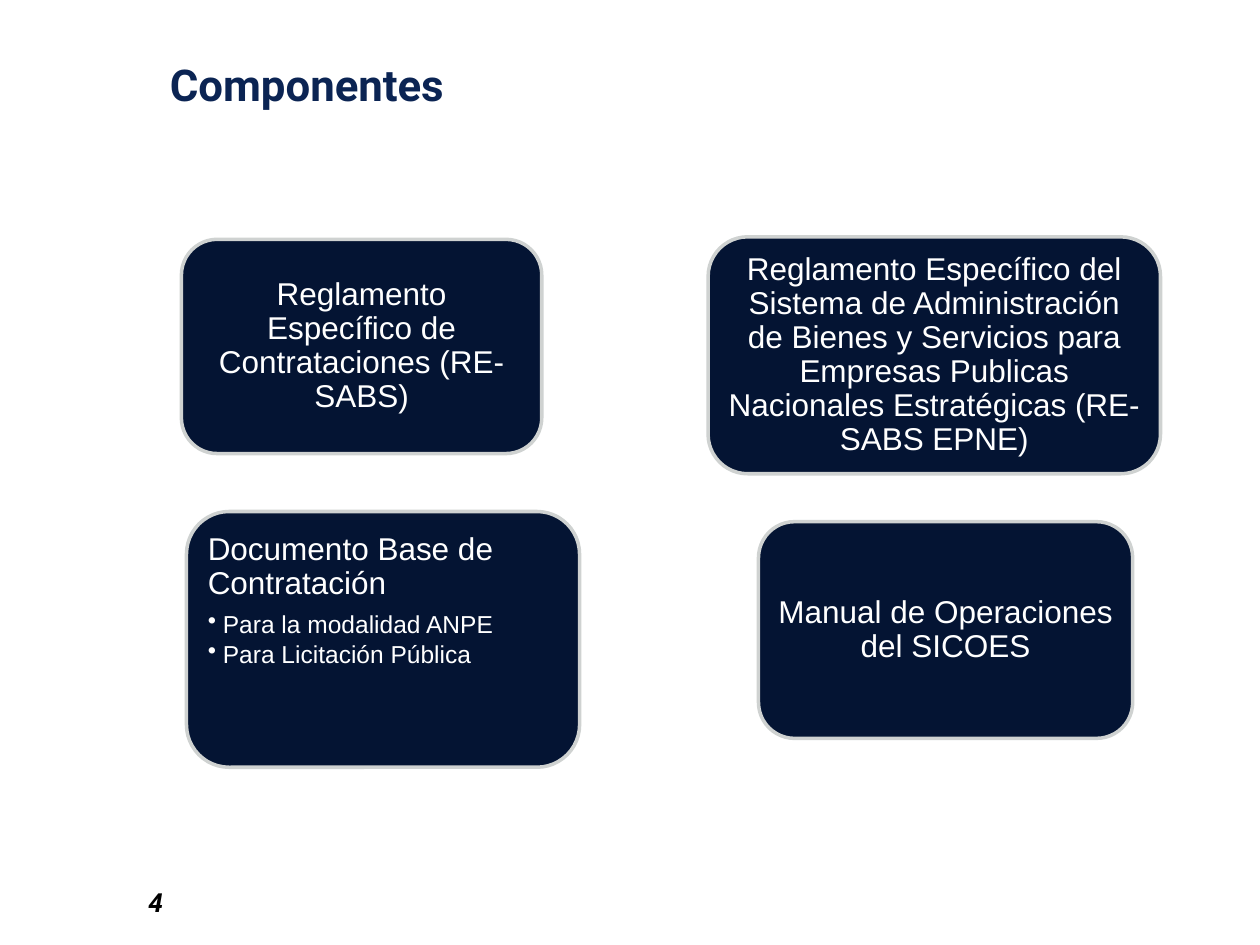
from dataclasses import dataclass

from lxml import etree
from pptx import Presentation
from pptx.dml.color import RGBColor
from pptx.enum.shapes import MSO_SHAPE
from pptx.enum.text import MSO_ANCHOR, PP_ALIGN
from pptx.oxml.ns import qn
from pptx.util import Inches, Pt

ROUNDED = MSO_SHAPE.ROUNDED_RECTANGLE
TOP, MIDDLE, BOTTOM = MSO_ANCHOR.TOP, MSO_ANCHOR.MIDDLE, MSO_ANCHOR.BOTTOM
LEFT, CENTER = PP_ALIGN.LEFT, PP_ALIGN.CENTER


@dataclass(frozen=True)
class Theme:
    title: RGBColor = RGBColor(0x0B, 0x24, 0x53)
    number: RGBColor = RGBColor(0, 0, 0)
    card: RGBColor = RGBColor(0x04, 0x14, 0x33)
    border: RGBColor = RGBColor(0xCF, 0xD2, 0xD1)
    card_text: RGBColor = RGBColor(0xFF, 0xFF, 0xFF)
    heading_font: str = "Roboto"
    body_font: str = "Arial"
    title_size: int = 25
    number_size: int = 15
    card_size: int = 18
    item_size: int = 14


THEME = Theme()

# Each card: box (left, top, width, height), heading, list items
CARDS = [
    ((1.44, 1.9, 2.86, 1.7),
     "Reglamento Específico de Contrataciones (RE-SABS)", []),
    ((5.62, 1.88, 3.59, 1.88),
     "Reglamento Específico del Sistema de Administración de Bienes y "
     "Servicios para Empresas Publicas Nacionales Estratégicas "
     "(RE-SABS EPNE)", []),
    ((1.48, 4.06, 3.12, 2.03), "Documento Base de Contratación",
     ["Para la modalidad ANPE", "Para Licitación Pública"]),
    ((6.02, 4.14, 2.97, 1.72), "Manual de Operaciones del SICOES", []),
]


def style(para, name, size, color):
    para.font.name = name
    para.font.size = Pt(size)
    para.font.color.rgb = color


def add_heading(page, box, text, anchor, size, color, italic=False):
    frame = page.shapes.add_textbox(*map(Inches, box)).text_frame
    frame.word_wrap = True
    frame.vertical_anchor = anchor
    para = frame.paragraphs[0]
    para.text = text
    style(para, THEME.heading_font, size, color)
    para.font.bold = True
    para.font.italic = italic


def add_bullet(para):
    properties = para._p.get_or_add_pPr()
    properties.set("marL", str(Inches(0.12)))
    properties.set("indent", str(-Inches(0.12)))
    etree.SubElement(properties, qn("a:buChar")).set("char", "•")


def add_card(page, box, heading, items):
    """Draw a card: centred heading alone, or left-aligned above its items."""
    card = page.shapes.add_shape(ROUNDED, *map(Inches, box))
    card.shadow.inherit = False
    card.fill.solid()
    card.fill.fore_color.rgb = THEME.card
    card.line.color.rgb = THEME.border
    card.line.width = Pt(2)

    frame = card.text_frame
    frame.word_wrap = True
    frame.vertical_anchor = TOP if items else MIDDLE
    frame.margin_left = frame.margin_right = Inches(0.07)
    frame.margin_top = frame.margin_bottom = Inches(0.07)

    para = frame.paragraphs[0]
    para.text = heading
    para.alignment = LEFT if items else CENTER
    para.line_spacing = 0.9
    para.space_after = Pt(0.35 * THEME.card_size if items else 0)
    style(para, THEME.body_font, THEME.card_size, THEME.card_text)

    for item in items:
        para = frame.add_paragraph()
        para.text = item
        para.level = 1
        para.alignment = LEFT
        para.line_spacing = 0.9
        para.space_after = Pt(0.15 * THEME.item_size)
        add_bullet(para)
        style(para, THEME.body_font, THEME.item_size, THEME.card_text)


def main():
    deck = Presentation()
    deck.slide_width, deck.slide_height = Inches(10), Inches(7.5)
    page = deck.slides.add_slide(deck.slide_layouts[6])
    add_heading(page, (1.25, 0.17, 8.42, 1), "Componentes", MIDDLE,
                THEME.title_size, THEME.title)
    for box, heading, items in CARDS:
        add_card(page, box, heading, items)
    add_heading(page, (1.08, 6.83, 2.33, 0.5), "4", BOTTOM,
                THEME.number_size, THEME.number, italic=True)
    deck.save("out.pptx")


if __name__ == "__main__":
    main()
